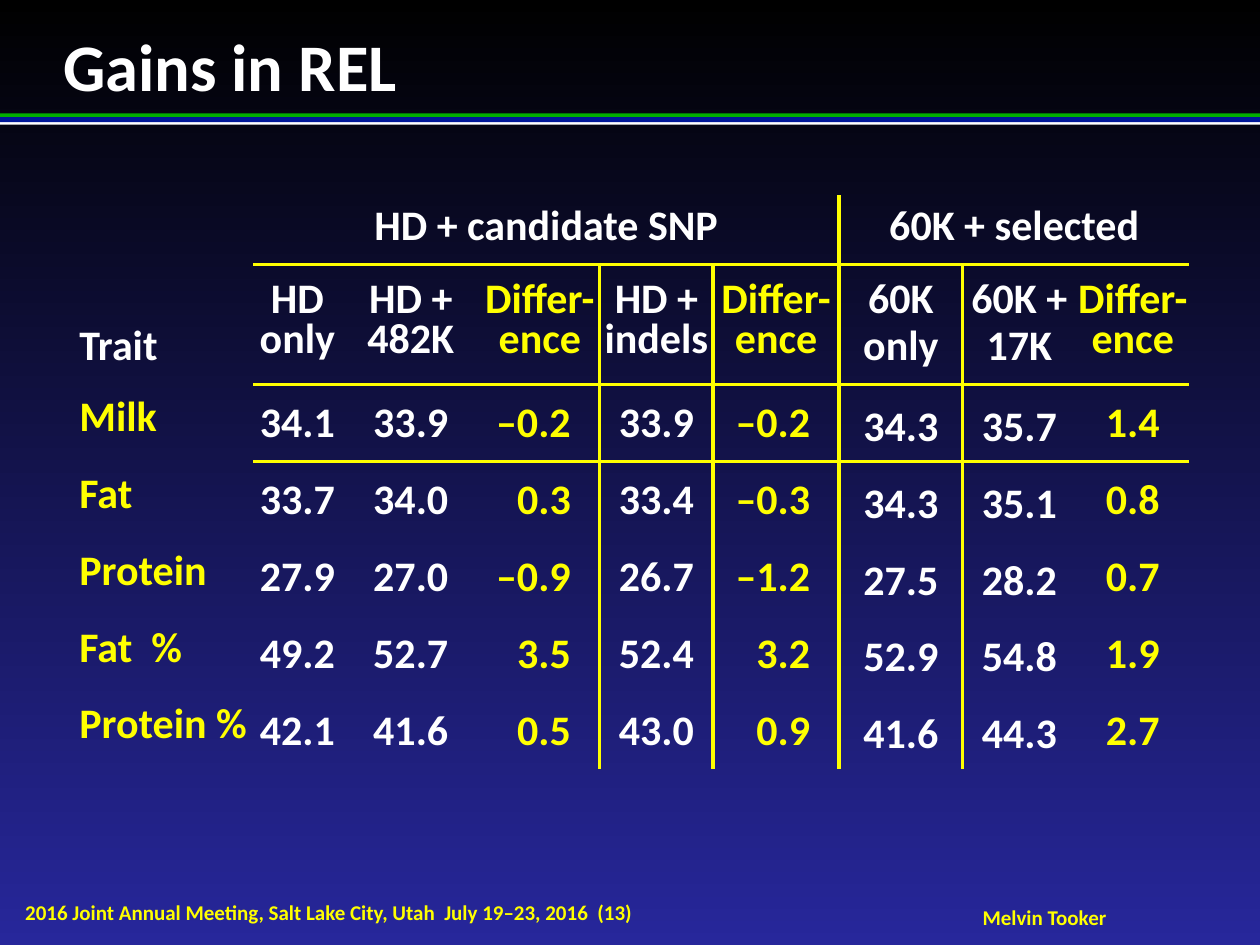
from lxml import etree
from pptx import Presentation
from pptx.dml.color import RGBColor
from pptx.enum import shapes, text
from pptx.oxml import ns
from pptx.util import Inches, Pt

BLACK = RGBColor(0x00, 0x00, 0x00)
WHITE = RGBColor(0xFF, 0xFF, 0xFF)
YELLOW = RGBColor(0xFF, 0xFF, 0x00)
GREEN = RGBColor(0x01, 0xAF, 0x00)
BLUE = RGBColor(0x00, 0x17, 0x99)
INDIGO = RGBColor(0x27, 0x27, 0x9B)

LEFT, CENTER, RIGHT = text.PP_ALIGN.LEFT, text.PP_ALIGN.CENTER, text.PP_ALIGN.RIGHT
TOP, MIDDLE, BOTTOM = text.MSO_ANCHOR.TOP, text.MSO_ANCHOR.MIDDLE, text.MSO_ANCHOR.BOTTOM
NO_STYLE = "{2D5ABB26-0587-4C30-8999-92F81FD0307C}"

COLUMN_WIDTHS = [1.38, 0.7, 1.1, 0.95, 0.9, 1, 0.98, 0.9, 0.9]
ROW_HEIGHTS = [0.55, 0.89] + [0.61] * 5
ROWS = [
    ["Trait", "HD + candidate SNP", "", "", "", "", "60K + selected", "", ""],
    ["", "HD only", "HD + 482K", "Differ-ence", "HD + indels", "Differ-ence",
     "60K only", "60K + 17K", "Differ-ence"],
    ["Milk", "34.1", "33.9", "–0.2", "33.9", "–0.2", "34.3", "35.7", "1.4"],
    ["Fat", "33.7", "34.0", "0.3", "33.4", "–0.3", "34.3", "35.1", "0.8"],
    ["Protein", "27.9", "27.0", "–0.9", "26.7", "–1.2", "27.5", "28.2", "0.7"],
    ["Fat  %", "49.2", "52.7", "3.5", "52.4", "3.2", "52.9", "54.8", "1.9"],
    ["Protein %", "42.1", "41.6", "0.5", "43.0", "0.9", "41.6", "44.3", "2.7"],
]
DIFFERENCE_COLUMNS = (3, 5, 8)
SIGNED_COLUMNS = (3, 5)
LOOSE_COLUMNS = (6, 7)


def set_attributes(target, values):
    for name, value in values.items():
        setattr(target, name, value)


def write_paragraph(paragraph, content, size, color, alignment):
    run = paragraph.add_run()
    run.text = content
    paragraph.alignment = alignment
    set_attributes(run.font, {"name": "Calibri", "size": Pt(size), "bold": True})
    run.font.color.rgb = color


def fill_frame(frame, content, size, color, alignment, anchor, wrap=True):
    set_attributes(frame, {
        "margin_left": 0, "margin_top": 0, "margin_right": 0, "margin_bottom": 0,
        "word_wrap": wrap, "vertical_anchor": anchor,
        "auto_size": text.MSO_AUTO_SIZE.SHAPE_TO_FIT_TEXT,
    })
    write_paragraph(frame.paragraphs[0], content, size, color, alignment)


def paint_background(slide):
    fill = slide.background.fill
    fill.gradient()
    fill.gradient_angle = 270
    for stop, position, color in zip(fill.gradient_stops, (0, 1), (BLACK, INDIGO)):
        stop.position = position
        stop.color.rgb = color


def add_band(slide, top, height, color):
    shape = slide.shapes.add_shape(
        shapes.MSO_SHAPE.RECTANGLE, 0, Inches(top), Inches(10), Inches(height))
    shape.shadow.inherit = False
    shape.fill.solid()
    shape.fill.fore_color.rgb = color
    shape.line.fill.background()


def add_title(slide, content):
    title = slide.shapes.title
    set_attributes(title, {"left": Inches(0.5), "top": Inches(0.2),
                           "width": Inches(9), "height": Inches(0.64)})
    fill_frame(title.text_frame, content, 38, WHITE, LEFT, TOP)


def add_footer(slide, content, left, top, width, alignment, wrap):
    box = slide.shapes.add_textbox(
        Inches(left), Inches(top), Inches(width), Inches(0.2))
    fill_frame(box.text_frame, content, 12, YELLOW, alignment, MIDDLE, wrap)


def has_rule_right(row, column):
    return column == 5 or (column == 3 and row > 0)


def has_rule_below(row, column):
    return row in (0, 1) and column > 0


def add_borders(cell, row, column):
    sides = {
        "a:lnL": has_rule_right(row, column - 1),
        "a:lnR": has_rule_right(row, column),
        "a:lnT": has_rule_below(row - 1, column),
        "a:lnB": has_rule_below(row, column),
    }
    properties = cell._tc.get_or_add_tcPr()
    for tag, ruled in sides.items():
        if ruled:
            line = etree.SubElement(properties, ns.qn(tag), w=str(Pt(2.25)))
            solid = etree.SubElement(line, ns.qn("a:solidFill"))
            etree.SubElement(solid, ns.qn("a:srgbClr"), val=str(YELLOW))


def cell_format(row, column):
    top = 0.1 if row > 0 and column > 0 else 0
    right = 0.23 if row > 1 and column in SIGNED_COLUMNS else 0
    bottom = 0.1 if row < 2 else 0
    return {
        "margin_left": 0, "margin_top": Inches(top),
        "margin_right": Inches(right), "margin_bottom": Inches(bottom),
        "vertical_anchor": BOTTOM if row == 0 else MIDDLE,
    }


def cell_alignment(row, column):
    if column == 0:
        return LEFT
    return RIGHT if row > 1 and column in SIGNED_COLUMNS else CENTER


def cell_color(row, column):
    is_trait = column == 0 and row > 1
    return YELLOW if is_trait or column in DIFFERENCE_COLUMNS else WHITE


def fill_cell(cell, content, row, column):
    set_attributes(cell, cell_format(row, column))
    add_borders(cell, row, column)
    cell.fill.background()
    if content:
        paragraph = cell.text_frame.paragraphs[0]
        loose = row > 0 and column in LOOSE_COLUMNS
        paragraph.line_spacing = Pt(27 if loose else 23)
        write_paragraph(paragraph, content, 24, cell_color(row, column),
                        cell_alignment(row, column))


def add_reliability_table(slide):
    table = slide.shapes.add_table(
        len(ROWS), len(COLUMN_WIDTHS), Inches(0.63), Inches(1.55),
        Inches(sum(COLUMN_WIDTHS)), Inches(sum(ROW_HEIGHTS))).table
    set_attributes(table, {"first_row": False, "horz_banding": False})
    table._tbl.tblPr.find(ns.qn("a:tableStyleId")).text = NO_STYLE
    for column, width in zip(table.columns, COLUMN_WIDTHS):
        column.width = Inches(width)
    for row, height in zip(table.rows, ROW_HEIGHTS):
        row.height = Inches(height)
    for start, end in [((0, 0), (1, 0)), ((0, 1), (0, 5)), ((0, 6), (0, 8))]:
        table.cell(*start).merge(table.cell(*end))
    for row, contents in enumerate(ROWS):
        for column, content in enumerate(contents):
            fill_cell(table.cell(row, column), content, row, column)


def main():
    presentation = Presentation()
    set_attributes(presentation, {"slide_width": Inches(10), "slide_height": Inches(7.5)})
    slide = presentation.slides.add_slide(presentation.slide_layouts[5])
    paint_background(slide)
    for top, height, color in [(0.9, 0.03, GREEN), (0.96, 0.03, WHITE), (0.93, 0.04, BLUE)]:
        add_band(slide, top, height, color)
    add_footer(slide, "2016 Joint Annual Meeting, Salt Lake City, Utah  July 19–23, 2016  (13)",
               0.2, 7.14, 7.11, LEFT, True)
    add_footer(slide, "Melvin Tooker", 7.79, 7.18, 1, CENTER, False)
    add_title(slide, "Gains in REL")
    add_reliability_table(slide)
    presentation.save("out.pptx")


if __name__ == "__main__":
    main()
